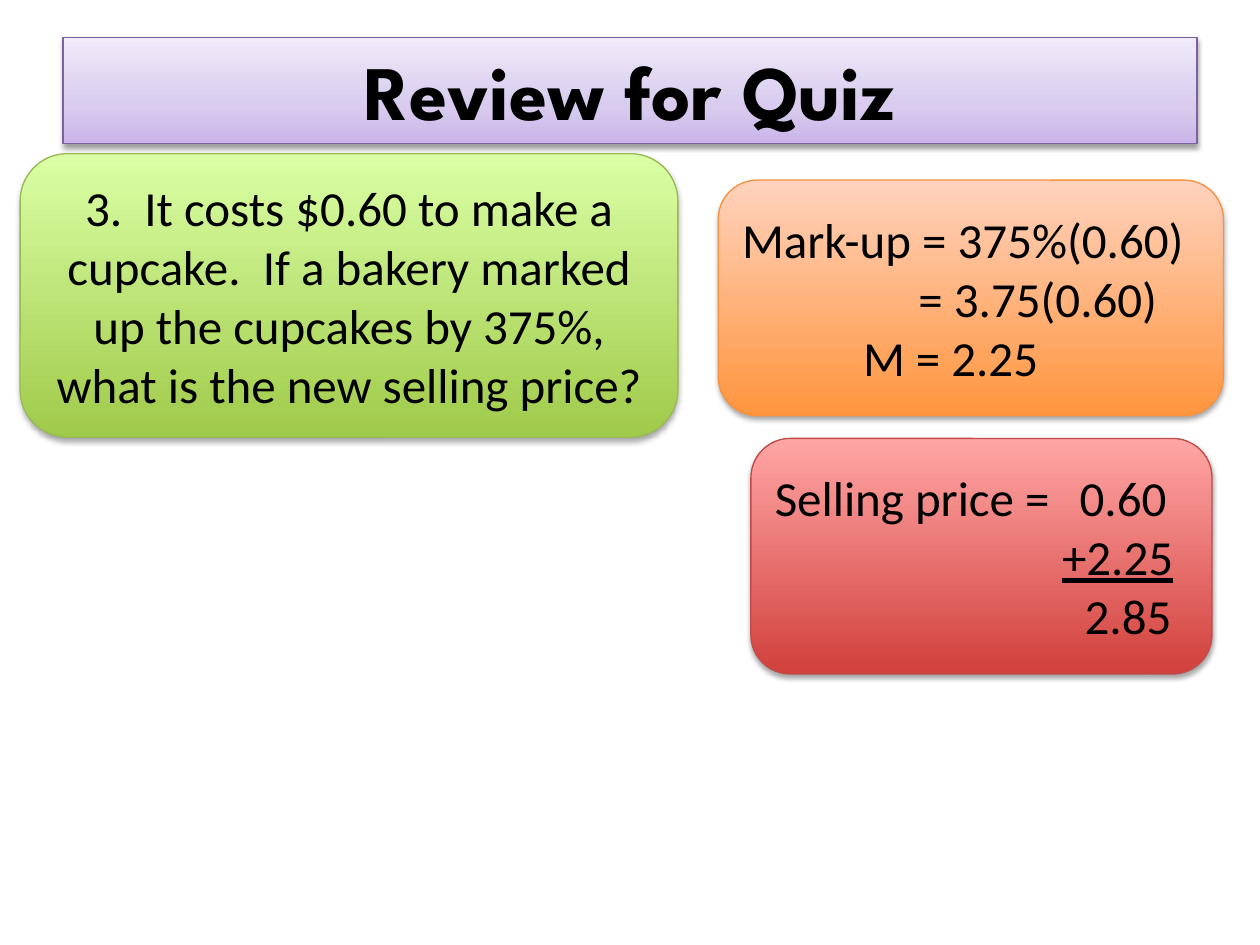
"""Build the quiz review slide on a 100-column, 75-row grid."""
from lxml import etree
from pptx import Presentation, util as u
from pptx.dml.color import RGBColor
from pptx.enum import shapes, text
from pptx.oxml.ns import qn

BLACK = RGBColor(0x00, 0x00, 0x00)
LILAC = RGBColor(0xC9, 0xB5, 0xE8)
LILAC_MID = RGBColor(0xD8, 0xCB, 0xEE)
LILAC_PALE = RGBColor(0xF0, 0xEA, 0xF9)
PURPLE = RGBColor(0x7D, 0x60, 0xA0)
GREEN = RGBColor(0xA0, 0xCA, 0x4A)
GREEN_PALE = RGBColor(0xDA, 0xFF, 0xA5)
GREEN_EDGE = RGBColor(0x98, 0xB9, 0x55)
ORANGE = RGBColor(0xFF, 0x95, 0x3E)
ORANGE_PALE = RGBColor(0xFF, 0xD2, 0xBD)
ORANGE_EDGE = RGBColor(0xF6, 0x92, 0x40)
RED = RGBColor(0xD1, 0x40, 0x3C)
RED_PALE = RGBColor(0xFF, 0xA6, 0xA5)
RED_EDGE = RGBColor(0xBF, 0x4C, 0x48)

RECT, ROUND = shapes.MSO_SHAPE.RECTANGLE, shapes.MSO_SHAPE.ROUNDED_RECTANGLE
TOP, MIDDLE = text.MSO_ANCHOR.TOP, text.MSO_ANCHOR.MIDDLE
LEFT, CENTER = text.PP_ALIGN.LEFT, text.PP_ALIGN.CENTER
TITLE = {"name": "League Spartan", "size": u.Pt(44), "bold": True}
BODY = {"name": "Calibri", "size": u.Pt(28)}
TITLE_SHADOW, CARD_SHADOW = (38, 1.6), (35, 1.8)
PRICE_TAB = 24.2

prs = Presentation()
prs.slide_width, prs.slide_height = u.Inches(10), u.Inches(7.5)
col, row = prs.slide_width / 100, prs.slide_height / 75
s = prs.slides.add_slide(prs.slide_layouts[6])

boxes = [
    (RECT, (5, 3, 90, 8.4), [(0, LILAC), (35, LILAC_MID), (100, LILAC_PALE)],
     PURPLE, TITLE_SHADOW, TOP, CENTER, TITLE, [(0, "Review for Quiz", False)]),
    (ROUND, (1.6, 12.2, 52.2, 22.5), [(0, GREEN), (100, GREEN_PALE)],
     GREEN_EDGE, CARD_SHADOW, MIDDLE, CENTER, BODY,
     [(0, "3.  It costs $0.60 to make a cupcake.  If a bakery marked up "
          "the cupcakes by 375%, what is the new selling price?", False)]),
    (ROUND, (57, 14.3, 40.1, 18.7), [(0, ORANGE), (100, ORANGE_PALE)],
     ORANGE_EDGE, CARD_SHADOW, MIDDLE, LEFT, BODY,
     [(0, "Mark-up = 375%(0.60)", False), (14, "= 3.75(0.60)", False),
      (9.6, "M = 2.25", False)]),
    (ROUND, (59.6, 34.8, 36.6, 18.7), [(0, RED), (100, RED_PALE)],
     RED_EDGE, CARD_SHADOW, MIDDLE, LEFT, BODY,
     [(0, "Selling price =\t0.60", False), (22.8, "+2.25", True),
      (24.6, "2.85", False)]),
]

for kind, (x, y, w, h), stops, edge, (alpha, dist), anchor, align, style, lines in boxes:
    sp = s.shapes.add_shape(kind, int(x * col), int(y * row), int(w * col), int(h * row))
    sp.fill.gradient()
    sp.fill.gradient_angle = 90
    gs_list = sp._element.spPr.find(".//" + qn("a:gsLst"))
    for gs in list(gs_list):
        gs_list.remove(gs)
    for pos, color in stops:
        gs = etree.SubElement(gs_list, qn("a:gs"), pos=str(pos * 1000))
        etree.SubElement(gs, qn("a:srgbClr"), val=str(color))
    sp.line.color.rgb, sp.line.width = edge, u.Pt(0.75)

    sp.shadow.inherit = False
    shadow = etree.SubElement(
        sp._element.spPr.find(qn("a:effectLst")), qn("a:outerShdw"),
        blurRad=str(u.Pt(3.1)), dist=str(u.Pt(dist)), dir="5400000", rotWithShape="0")
    black = etree.SubElement(shadow, qn("a:srgbClr"), val=str(BLACK))
    etree.SubElement(black, qn("a:alpha"), val=str(alpha * 1000))

    tf = sp.text_frame
    tf.word_wrap, tf.vertical_anchor = True, anchor
    for i, (indent, words, underline) in enumerate(lines):
        p = tf.add_paragraph() if i else tf.paragraphs[0]
        p.alignment = align
        p_pr = p._p.get_or_add_pPr()
        p_pr.set("marL", str(int(indent * col)))
        if "\t" in words:
            tabs = etree.SubElement(p_pr, qn("a:tabLst"))
            etree.SubElement(tabs, qn("a:tab"), pos=str(int(PRICE_TAB * col)), algn="l")
        r = p.add_run()
        r.text = words
        r.font.color.rgb = BLACK
        for name, value in {**style, "underline": underline}.items():
            setattr(r.font, name, value)

prs.save("out.pptx")
